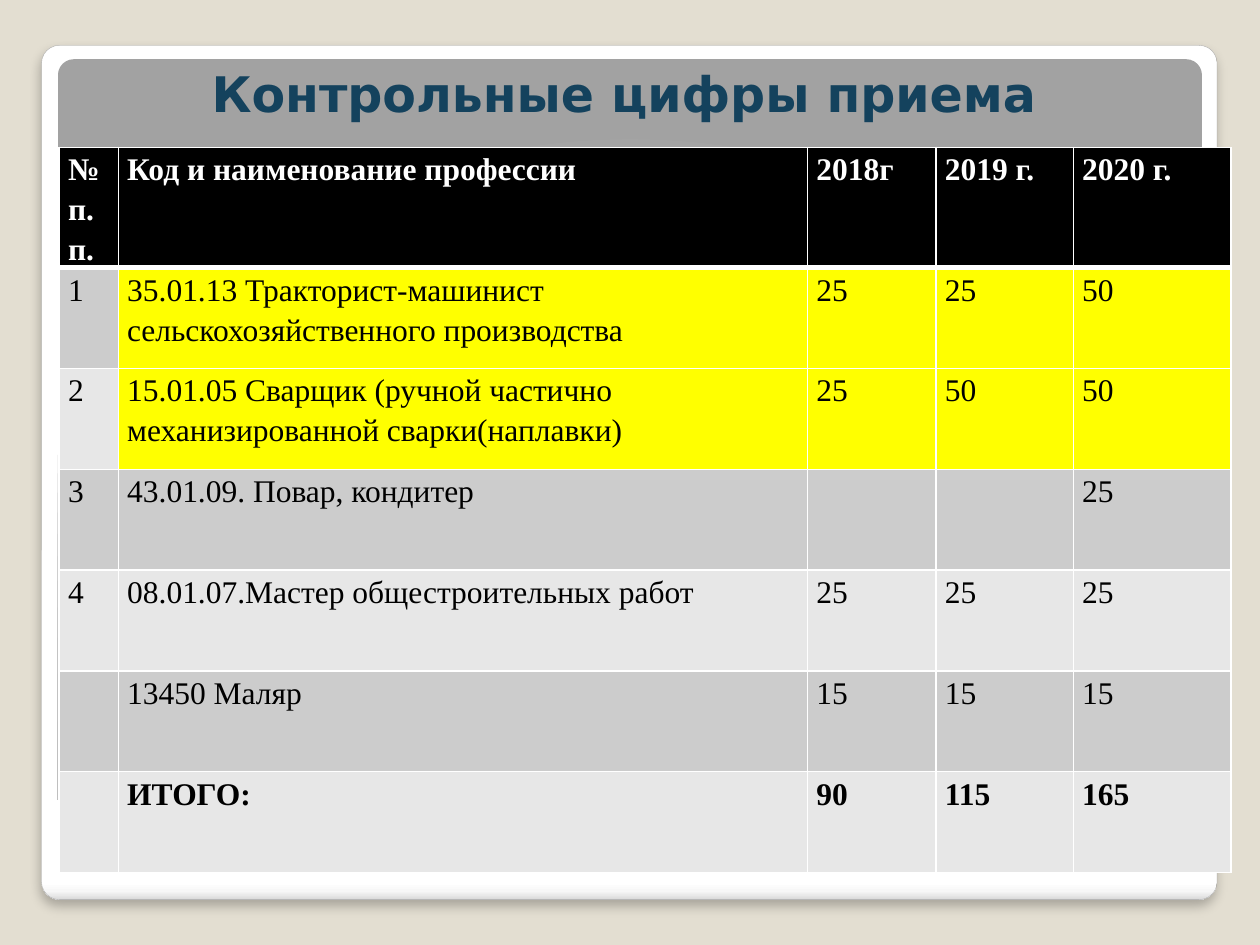
from lxml import etree
from pptx import Presentation
from pptx.dml.color import RGBColor
from pptx.enum.shapes import MSO_SHAPE
from pptx.enum.text import MSO_ANCHOR, PP_ALIGN
from pptx.oxml.ns import qn
from pptx.util import Inches, Pt

ROUND_RECT = MSO_SHAPE.ROUNDED_RECTANGLE
BOTTOM = MSO_ANCHOR.BOTTOM
LEFT, JUSTIFY = PP_ALIGN.LEFT, PP_ALIGN.JUSTIFY

COLORS = {
    "page": "E3DED1", "title": "14425D", "white": "FFFFFF", "black": "000000",
    "edge": "A4A4A4", "odd": "CCCCCC", "even": "E7E7E7", "highlight": "FFFF00",
}
CARD_STOPS = [(0, "FFFFFF"), (98, "FFFFFF"), (99, "F7F7F7"), (100, "DADADA")]
PANEL_STOPS = [(0, "FFFFFF"), (55, "E1E1E1"), (100, "A2A2A2")]

COLUMNS = [0.47, 5.47, 1.02, 1.09, 1.25]
ROW_HEIGHT = 0.8
ROWS = [
    ["№ п.п.", "Код и наименование профессии", "2018г", "2019 г.", "2020 г."],
    ["1", "35.01.13 Тракторист-машинист сельскохозяйственного производства",
     "25", "25", "50"],
    ["2", "15.01.05 Сварщик (ручной частично механизированной сварки(наплавки)",
     "25", "50", "50"],
    ["3", "43.01.09. Повар, кондитер", "", "", "25"],
    ["4", "08.01.07.Мастер общестроительных работ", "25", "25", "25"],
    ["", "13450 Маляр", "15", "15", "15"],
    ["", "ИТОГО:", "90", "115", "165"],
]
HIGHLIGHTED = (1, 2)
BOLD_ROWS = (0, len(ROWS) - 1)
CELL_MARGINS = {"margin_left": Inches(0.07), "margin_right": Inches(0.07),
                "margin_top": 0, "margin_bottom": 0}


def rgb(name):
    return RGBColor.from_string(COLORS[name])


def set_attrs(obj, values):
    for name, value in values.items():
        setattr(obj, name, value)


def add_node(parent, tag, **attrs):
    return etree.SubElement(parent, qn(tag), {k: str(v) for k, v in attrs.items()})


def add_color(parent, hex_color):
    return add_node(parent, "a:srgbClr", val=hex_color)


def style_text(p, text, font, size, bold, color):
    r = p.add_run()
    r.text = text
    set_attrs(r.font, {"name": font, "size": Pt(size), "bold": bold})
    r.font.color.rgb = rgb(color)


def add_rounded(slide, box, stops):
    """Add a rounded card and return it with its emptied gradient."""
    sp = slide.shapes.add_shape(ROUND_RECT, *map(Inches, box))
    sp.adjustments[0] = 0.021
    sp.shadow.inherit = False
    sp.line.fill.background()
    sp.fill.gradient()
    grad = sp._element.spPr.find(qn("a:gradFill"))
    for child in list(grad):
        grad.remove(child)
    stop_list = add_node(grad, "a:gsLst")
    for pos, color in stops:
        add_color(add_node(stop_list, "a:gs", pos=pos * 1000), color)
    return sp, grad


def add_background(slide):
    # White card with a soft shadow
    card, grad = add_rounded(slide, (0.33, 0.36, 9.33, 6.78), CARD_STOPS)
    add_node(grad, "a:lin", ang=90 * 60000, scaled=0)
    card.line.color.rgb = rgb("edge")
    card.line.width = Pt(0.16)
    effects = card._element.spPr.find(qn("a:effectLst"))
    shadow = add_node(effects, "a:outerShdw", blurRad=Pt(6), dist=Pt(4),
                      dir=90 * 60000, algn="t", rotWithShape=0)
    add_node(add_color(shadow, COLORS["black"]), "a:alpha", val=25000)

    # Inner panel, shaded from a point below it
    _, grad = add_rounded(slide, (0.46, 0.47, 9.08, 6), PANEL_STOPS)
    circle = add_node(grad, "a:path", path="circle")
    add_node(circle, "a:fillToRect", l=50000, t=175000, r=50000, b=-75000)


def add_title(slide, text):
    title = slide.shapes.title
    set_attrs(title, {"left": Inches(0.23), "top": Inches(0.39),
                      "width": Inches(8.95), "height": Inches(0.63)})
    tf = title.text_frame
    set_attrs(tf, {"vertical_anchor": BOTTOM, "margin_left": Inches(1.45),
                   "word_wrap": True})
    p = tf.paragraphs[0]
    p.alignment = LEFT
    style_text(p, text, "DejaVu Sans", 28, True, "title")
    # Bring the title in front of the background
    slide.shapes._spTree.append(title._element)


def set_borders(cell, top, bottom):
    tc_pr = cell._tc.get_or_add_tcPr()
    widths = {"a:lnL": 1, "a:lnR": 1, "a:lnT": top, "a:lnB": bottom}
    for i, (tag, width) in enumerate(widths.items()):
        line = add_node(tc_pr, tag, w=Pt(width))
        add_color(add_node(line, "a:solidFill"), COLORS["white"])
        tc_pr.insert(i, line)


def cell_fill(row, col):
    if row == 0:
        return "black"
    if row in HIGHLIGHTED and col > 0:
        return "highlight"
    return "odd" if row % 2 else "even"


def fill_cell(cell, row, col, text):
    set_attrs(cell, CELL_MARGINS)
    cell.fill.solid()
    cell.fill.fore_color.rgb = rgb(cell_fill(row, col))
    set_borders(cell, top=3 if row == 1 else 1, bottom=3 if row == 0 else 1)
    if not text:
        return
    p = cell.text_frame.paragraphs[0]
    wraps = row in HIGHLIGHTED and col == 1
    set_attrs(p, {"alignment": LEFT if wraps else JUSTIFY,
                  "line_spacing": 1.15, "space_after": Pt(10)})
    style_text(p, text, "Times New Roman", 18, row in BOLD_ROWS,
               "white" if row == 0 else "black")


def add_intake_table(slide):
    table = slide.shapes.add_table(
        len(ROWS), len(COLUMNS), Inches(0.47), Inches(1.17),
        Inches(sum(COLUMNS)), Inches(ROW_HEIGHT * len(ROWS))).table
    for column, width in zip(table.columns, COLUMNS):
        column.width = Inches(width)
    for row, texts in enumerate(ROWS):
        table.rows[row].height = Inches(ROW_HEIGHT)
        for col, text in enumerate(texts):
            fill_cell(table.cell(row, col), row, col, text)


def main():
    prs = Presentation()
    prs.slide_width, prs.slide_height = Inches(10), Inches(7.5)
    slide = prs.slides.add_slide(prs.slide_layouts[5])
    slide.background.fill.solid()
    slide.background.fill.fore_color.rgb = rgb("page")
    add_background(slide)
    add_title(slide, "Контрольные цифры приема")
    add_intake_table(slide)
    prs.save("out.pptx")


if __name__ == "__main__":
    main()
